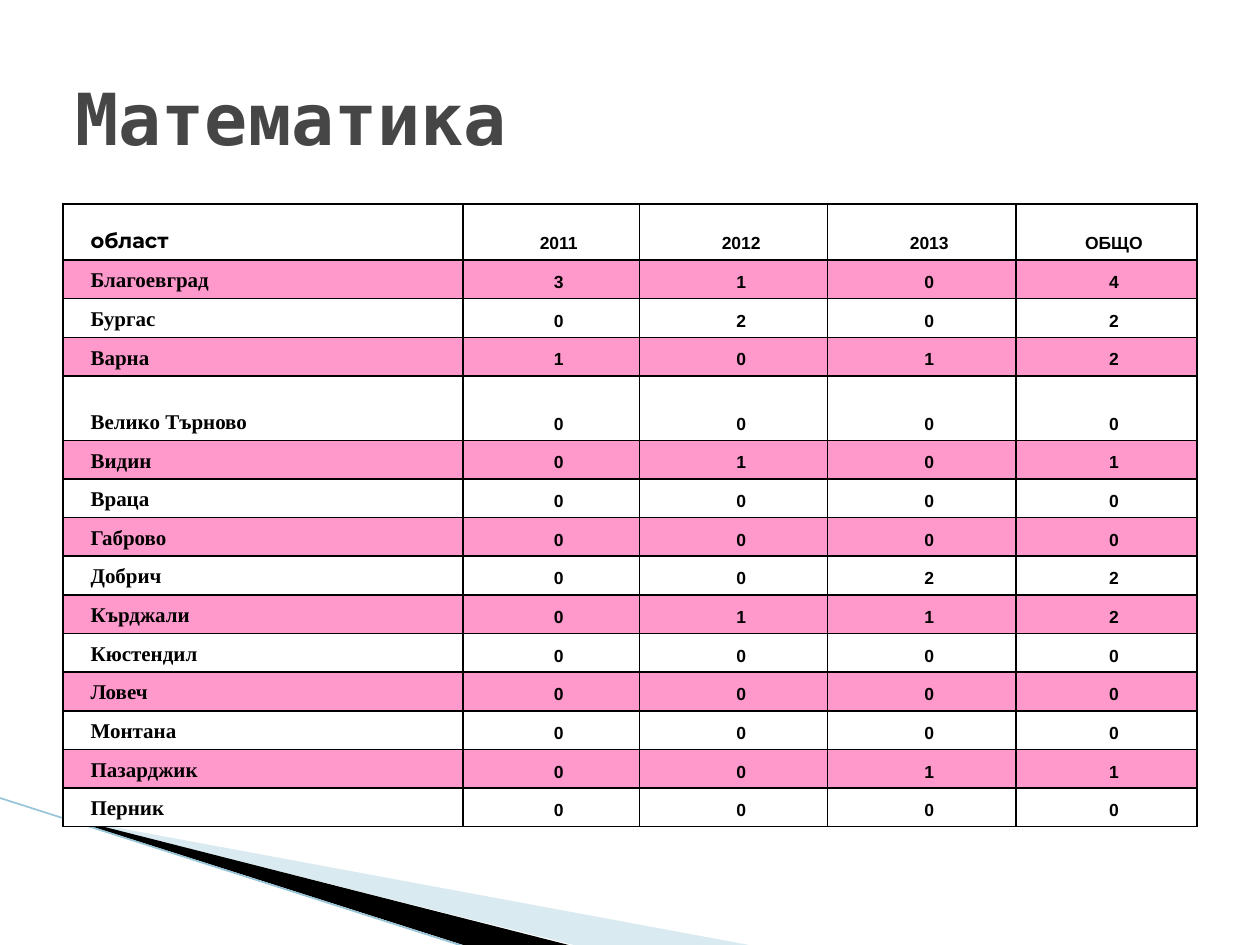
from lxml.etree import SubElement
from pptx import Presentation
from pptx.dml.color import RGBColor
from pptx.enum.shapes import MSO_CONNECTOR
from pptx.enum.text import MSO_ANCHOR, PP_ALIGN
from pptx.oxml.ns import qn
from pptx.util import Pt

COLORS = {
    "title": "464646",
    "text": "000000",
    "white": "FFFFFF",
    "pink": "FF99CC",
    "pale_blue": "A0CBDC",
    "edge": "97C5D8",
    "border": "000000",
}

HEADER = ["област", "2011", "2012", "2013", "ОБЩО"]
REGIONS = [
    ("Благоевград", 3, 1, 0, 4),
    ("Бургас", 0, 2, 0, 2),
    ("Варна", 1, 0, 1, 2),
    ("Велико Търново", 0, 0, 0, 0),
    ("Видин", 0, 1, 0, 1),
    ("Враца", 0, 0, 0, 0),
    ("Габрово", 0, 0, 0, 0),
    ("Добрич", 0, 0, 2, 2),
    ("Кърджали", 0, 1, 1, 2),
    ("Кюстендил", 0, 0, 0, 0),
    ("Ловеч", 0, 0, 0, 0),
    ("Монтана", 0, 0, 0, 0),
    ("Пазарджик", 0, 0, 1, 1),
    ("Перник", 0, 0, 0, 0),
]
COL_WIDTHS = [228.5, 101, 107.5, 107.5, 103.5]
ROW_HEIGHT = 22.1
SPECIAL_HEIGHTS = {0: 32, 4: 36.8}


def rgb(name):
    return RGBColor.from_string(COLORS[name])


def add_run(p, text, font, size, color):
    r = p.add_run()
    r.text = text
    r.font.name = font
    r.font.size = Pt(size)
    r.font.bold = True
    r.font.color.rgb = rgb(color)


def add_wedge(s, points, color, opacity=100):
    builder = s.shapes.build_freeform(*points[0], scale=Pt(1))
    builder.add_line_segments(points[1:], close=True)
    sp = builder.convert_to_shape()
    sp.shadow.inherit = False
    sp.line.fill.background()
    sp.fill.solid()
    sp.fill.fore_color.rgb = rgb(color)
    if opacity < 100:
        clr = sp.fill._xPr.find(f".//{qn('a:srgbClr')}")
        SubElement(clr, qn("a:alpha"), val=str(opacity * 1000))


def add_edge(s, x1, y1, x2, y2):
    line = s.shapes.add_connector(
        MSO_CONNECTOR.STRAIGHT, Pt(x1), Pt(y1), Pt(x2), Pt(y2))
    line.line.color.rgb = rgb("edge")
    line.line.width = Pt(0.95)
    SubElement(line._element.spPr, qn("a:effectLst"))


def add_title(s, text):
    tf = s.shapes.add_textbox(Pt(36), Pt(21.6), Pt(648), Pt(90)).text_frame
    tf.word_wrap = True
    tf.vertical_anchor = MSO_ANCHOR.MIDDLE
    add_run(tf.paragraphs[0], text, "DejaVu Sans Mono", 41, "title")


def set_borders(cell):
    tc_pr = cell._tc.get_or_add_tcPr()
    for i, side in enumerate(("lnL", "lnR", "lnT", "lnB")):
        ln = tc_pr.makeelement(qn(f"a:{side}"), {"w": str(Pt(1))})
        fill = SubElement(ln, qn("a:solidFill"))
        SubElement(fill, qn("a:srgbClr"), val=COLORS["border"])
        tc_pr.insert(i, ln)


def fill_cell(cell, text, font, size, fill, centered):
    cell.vertical_anchor = MSO_ANCHOR.BOTTOM
    cell.fill.solid()
    cell.fill.fore_color.rgb = rgb(fill)
    set_borders(cell)
    p = cell.text_frame.paragraphs[0]
    p.alignment = PP_ALIGN.CENTER if centered else PP_ALIGN.LEFT
    p_pr = p._p.get_or_add_pPr()
    p_pr.set("marL", str(Pt(28.8)))
    p_pr.set("indent", str(Pt(-20.2)))
    add_run(p, text, font, size, "text")


def add_results_table(s):
    rows = [HEADER, *REGIONS]
    heights = [SPECIAL_HEIGHTS.get(i, ROW_HEIGHT) for i in range(len(rows))]
    table = s.shapes.add_table(
        len(rows), len(HEADER), Pt(36), Pt(116.6),
        Pt(sum(COL_WIDTHS)), Pt(sum(heights))).table
    table.first_row = table.horz_banding = False
    for col, width in zip(table.columns, COL_WIDTHS):
        col.width = Pt(width)
    for i, values in enumerate(rows):
        table.rows[i].height = Pt(heights[i])
        fill = "pink" if i % 2 else "white"
        name_font = "Times New Roman" if i else "Montserrat"
        for j, value in enumerate(values):
            font, size = ("Arial", 10) if j else (name_font, 12)
            fill_cell(table.cell(i, j), str(value), font, size, fill, j > 0)


def main():
    prs = Presentation()
    prs.slide_width, prs.slide_height = Pt(720), Pt(540)
    s = prs.slides.add_slide(prs.slide_layouts[6])

    # Corner decoration
    add_wedge(s, [(39.6, 468.5), (428.4, 540.5), (328.5, 540.5), (39.6, 468)],
              "pale_blue", opacity=40)
    add_wedge(s, [(38.2, 467.3), (329, 540.7), (267.8, 541.4), (38.9, 468)],
              "text")
    add_edge(s, -0.7, 455.8, 267.1, 541.4)

    # Title and results by region
    add_title(s, "Математика")
    add_results_table(s)

    prs.save("out.pptx")


if __name__ == "__main__":
    main()
